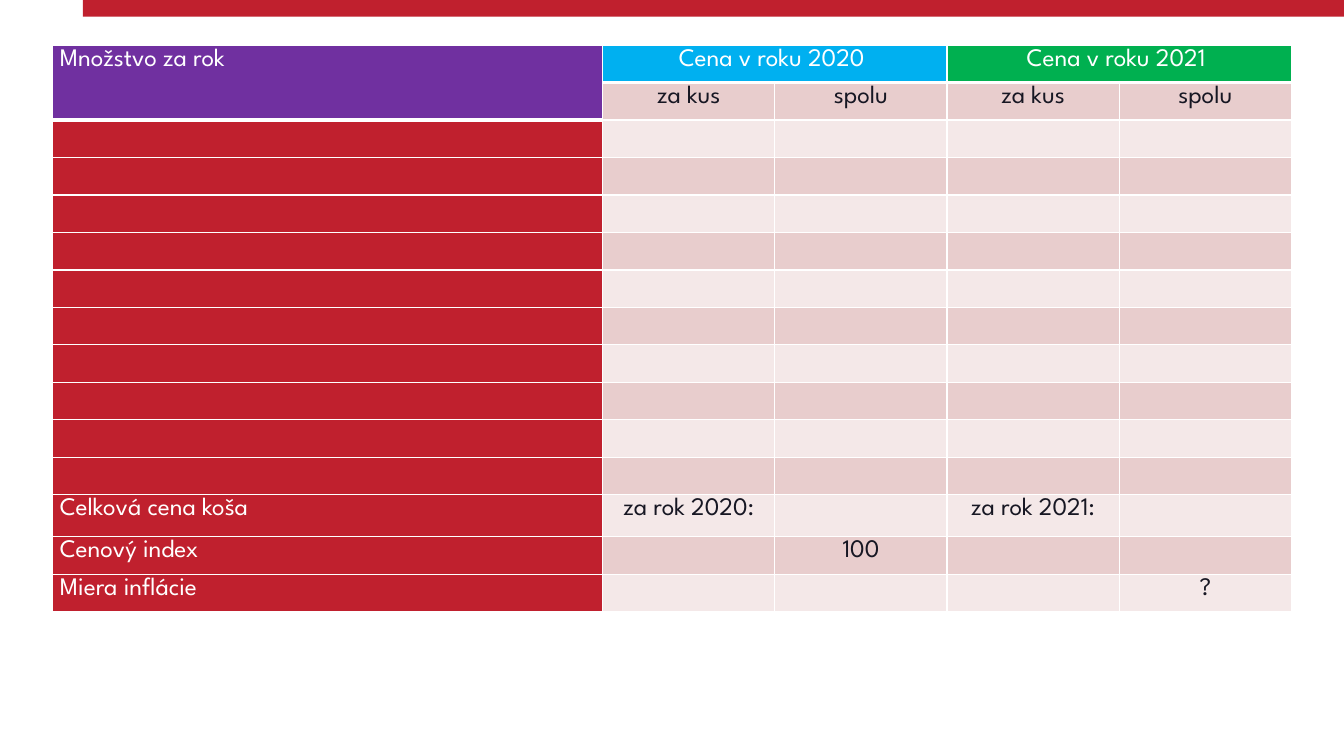
from dataclasses import dataclass

from lxml.etree import SubElement
from pptx import Presentation
from pptx.dml.color import RGBColor
from pptx.enum.shapes import MSO_SHAPE as Shape
from pptx.enum.text import PP_ALIGN as Align
from pptx.oxml.ns import qn
from pptx.table import Table, _Cell as Cell
from pptx.util import Emu, Pt

HUES = {
    "red": "C0202E", "violet": "7030A0", "blue": "00B0F0", "green": "00B050",
    "dark": "E8CDCD", "light": "F4E8E8", "ink": "171723", "white": "FFFFFF",
}
FONT = "League Spartan"
ROWS, TOTAL = 15, 12
HIGH, TALL = 540, 40
WIDTHS = (524, 164, 164, 164, 164)


@dataclass(frozen=True)
class Entry:
    row: int
    col: int
    text: str


@dataclass(frozen=True)
class Head:
    col: int
    hue: str
    down: int
    right: int


HEADS = (Head(0, "violet", 1, 0), Head(1, "blue", 0, 1), Head(3, "green", 0, 1))
ENTRIES = (
    Entry(0, 0, "Množstvo za rok"),
    Entry(0, 1, "Cena v roku 2020 "),
    Entry(0, 3, "Cena v roku 2021 "),
    *(Entry(1, col, ("spolu", "za kus")[col % 2]) for col in range(1, 5)),
    Entry(TOTAL, 0, "Celková cena koša "),
    Entry(TOTAL, 1, "za rok 2020:"),
    Entry(TOTAL, 3, "za rok 2021:"),
    Entry(13, 0, "Cenový index"),
    Entry(13, 2, "100"),
    Entry(14, 0, "Miera inflácie"),
    Entry(14, 4, "?"),
)


def px(count: float) -> Emu:
    return Emu(round(count * 9525))


def rgb(hue: str) -> RGBColor:
    return RGBColor.from_string(HUES[hue])


def edge(cell: Cell, low: int) -> None:
    """Draw white cell borders, with the bottom one `low` points wide."""
    props = cell._tc.get_or_add_tcPr()
    for side, width in (("L", 1), ("R", 1), ("T", 1), ("B", low)):
        line = SubElement(props, qn(f"a:ln{side}"), w=str(Pt(width)))
        fill = SubElement(line, qn("a:solidFill"))
        SubElement(fill, qn("a:srgbClr"), val=HUES["white"])


def paint(cell: Cell, hue: str) -> None:
    cell.fill.solid()
    cell.fill.fore_color.rgb = rgb(hue)


def style(cell: Cell, row: int, col: int) -> None:
    cell.margin_left = cell.margin_right = px(7)
    cell.margin_top = cell.margin_bottom = 0
    edge(cell, 3 if row == 0 else 1)
    paint(cell, "red" if col == 0 else ("light", "dark")[row % 2])


def write(table: Table, entry: Entry) -> None:
    cell = table.cell(entry.row, entry.col)
    cell.text = entry.text
    para = cell.text_frame.paragraphs[0]
    para.alignment = Align.CENTER if entry.col else Align.JUSTIFY
    para.line_spacing = 1.15
    font = para.font
    font.name, font.size = FONT, Pt(18)
    font.color.rgb = rgb("ink" if entry.row and entry.col else "white")


def main() -> None:
    deck = Presentation()
    deck.slide_width, deck.slide_height = px(1280), px(720)
    shapes = deck.slides.add_slide(deck.slide_layouts[6]).shapes

    bar = shapes.add_shape(Shape.RECTANGLE, px(79), 0, px(1201), px(16))
    bar.shadow.inherit = False
    bar.fill.solid()
    bar.fill.fore_color.rgb = rgb("red")
    bar.line.fill.background()

    table = shapes.add_table(
        ROWS, len(WIDTHS), px(50), px(43), px(sum(WIDTHS)), px(HIGH)
    ).table
    table.first_row = table.horz_banding = False
    for column, width in zip(table.columns, WIDTHS):
        column.width = px(width)
    for row, line in enumerate(table.rows):
        line.height = px(TALL if row == TOTAL else (HIGH - TALL) / (ROWS - 1))
        for col, cell in enumerate(line.cells):
            style(cell, row, col)
    for head in HEADS:
        cell = table.cell(0, head.col)
        cell.merge(table.cell(head.down, head.col + head.right))
        paint(cell, head.hue)
    for entry in ENTRIES:
        write(table, entry)

    deck.save("out.pptx")


if __name__ == "__main__":
    main()
